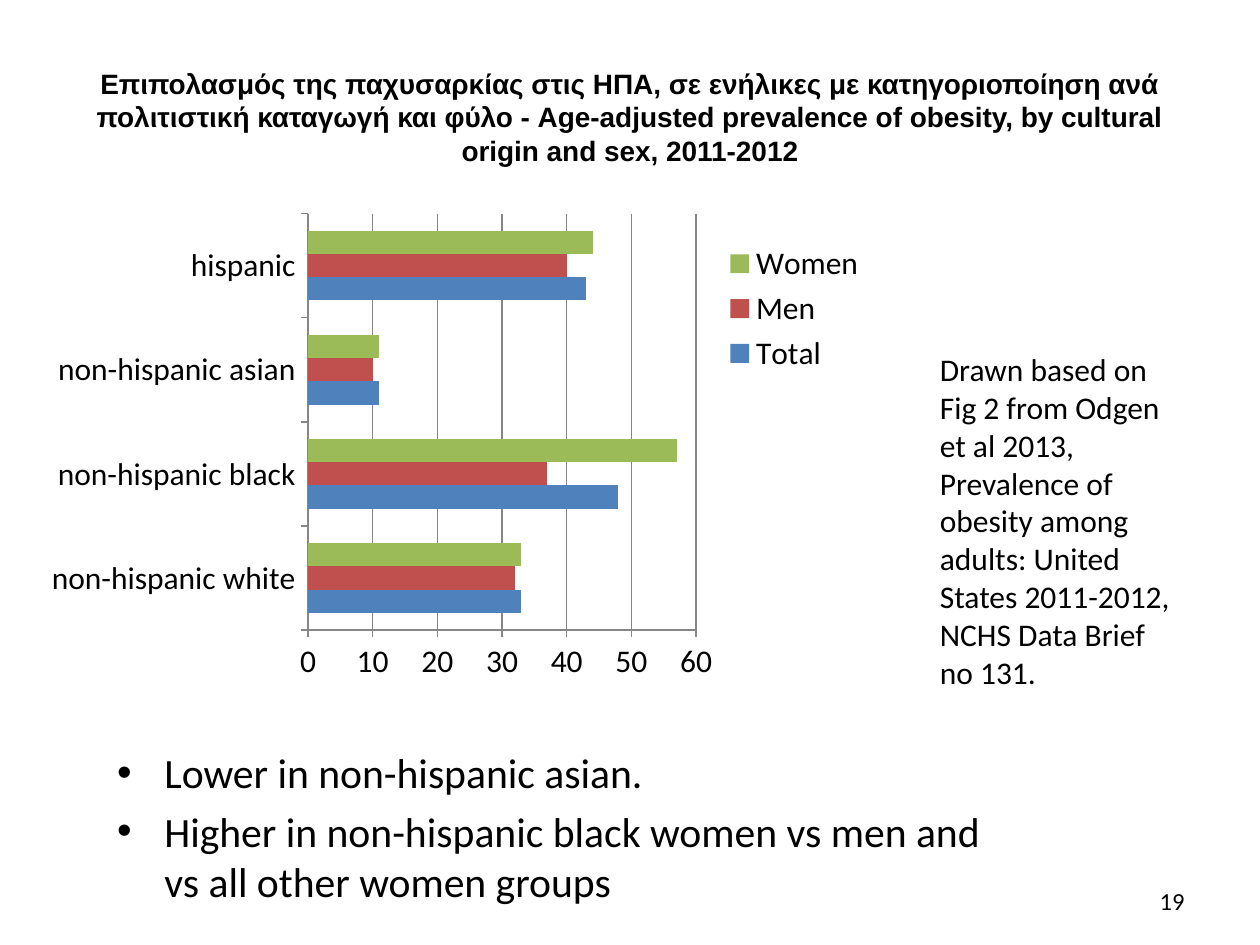
from lxml import etree
from pptx import Presentation
from pptx.chart.data import CategoryChartData
from pptx.dml.color import RGBColor
from pptx.enum import chart as ch, text
from pptx.oxml import parse_xml
from pptx.oxml.ns import nsdecls, qn
from pptx.util import Pt

COLORS = {"ink": "000000", "grid": "868686", "paper": "FFFFFF",
          "Total": "4F81BD", "Men": "C0504D", "Women": "9BBB59"}
ORIGINS = ["non-hispanic white", "non-hispanic black",
           "non-hispanic asian", "hispanic"]
PREVALENCE = {"Total": (33, 48, 11, 43),
              "Men": (32, 37, 10, 40),
              "Women": (33, 57, 11, 44)}


def rgb(name):
    return RGBColor.from_string(COLORS[name])


def style(font, size, face="Calibri", bold=False):
    font.size, font.name, font.bold = Pt(size), face, bold
    font.color.rgb = rgb("ink")


def add_text(slide, box, lines, size, face="Calibri", bold=False,
             align=text.PP_ALIGN.LEFT, anchor=text.MSO_ANCHOR.TOP):
    frame = slide.shapes.add_textbox(*map(Pt, box)).text_frame
    frame.word_wrap = True
    frame.vertical_anchor = anchor
    frame.text = "\n".join(lines)
    for paragraph in frame.paragraphs:
        paragraph.alignment = align
        for run in paragraph.runs:
            style(run.font, size, face, bold)
    return frame


def add_takeaways(slide, box, lines):
    """Bulleted text with a hanging indent."""
    for paragraph in add_text(slide, box, lines, 23.8).paragraphs:
        paragraph.space_before = Pt(4.8)
        properties = paragraph._p.get_or_add_pPr()
        properties.set("marL", str(Pt(27)))
        properties.set("indent", str(-Pt(27)))
        etree.SubElement(properties, qn("a:buFont")).set("typeface", "Arial")
        etree.SubElement(properties, qn("a:buChar")).set("char", "•")


def layout_xml(x, y, w, h, inner=False):
    """Manual chart layout, in fractions of the chart's box."""
    target = '<c:layoutTarget val="inner"/>' if inner else ""
    return parse_xml(
        f'<c:layout {nsdecls("c")}><c:manualLayout>{target}'
        '<c:xMode val="edge"/><c:yMode val="edge"/>'
        f'<c:x val="{x}"/><c:y val="{y}"/><c:w val="{w}"/><c:h val="{h}"/>'
        '</c:manualLayout></c:layout>')


def add_prevalence_chart(slide, box):
    data = CategoryChartData()
    data.categories = ORIGINS
    for group, values in PREVALENCE.items():
        data.add_series(group, values)
    chart = slide.shapes.add_chart(
        ch.XL_CHART_TYPE.BAR_CLUSTERED, *map(Pt, box), data).chart
    style(chart.font, 18)
    chart.has_title = False

    plot = chart.plots[0]
    plot.gap_width, plot.overlap, plot.vary_by_categories = 150, 0, False
    for series in plot.series:
        series.format.fill.solid()
        series.format.fill.fore_color.rgb = rgb(series.name)

    scale = chart.value_axis
    scale.minimum_scale, scale.maximum_scale, scale.major_unit = 0, 60, 10
    scale.has_major_gridlines = True
    for axis in (chart.category_axis, scale):
        axis.major_tick_mark = ch.XL_TICK_MARK.OUTSIDE
        axis.format.line.color.rgb = rgb("grid")
    scale.major_gridlines.format.line.color.rgb = rgb("grid")

    chart.has_legend = True
    legend = chart.legend
    legend.position = ch.XL_LEGEND_POSITION.RIGHT
    legend.include_in_layout = False
    for old in legend._element.findall(qn("c:layout")):
        legend._element.remove(old)
    legend._element.find(qn("c:legendPos")).addnext(
        layout_xml(0.8, 0.07, 0.18, 0.29))
    area = chart._chartSpace.chart.plotArea
    for old in area.findall(qn("c:layout")):
        area.remove(old)
    area.insert(0, layout_xml(0.32, 0.02, 0.455, 0.856, inner=True))


def build_slide(prs):
    slide = prs.slides.add_slide(prs.slide_layouts[6])
    slide.background.fill.solid()
    slide.background.fill.fore_color.rgb = rgb("paper")
    middle = text.MSO_ANCHOR.MIDDLE
    add_text(slide, (36, 21.6, 648, 90),
             ["Επιπολασμός της παχυσαρκίας στις ΗΠΑ, σε ενήλικες με "
              "κατηγοριοποίηση ανά πολιτιστική καταγωγή και φύλο - "
              "Age-adjusted prevalence of obesity, by cultural origin "
              "and sex, 2011-2012"],
             16, "Arial", True, text.PP_ALIGN.CENTER, middle)
    add_prevalence_chart(slide, (20, 116.6, 487.5, 278))
    add_takeaways(slide, (59.8, 423.4, 510.5, 87.8),
                  ["Lower in non-hispanic asian.",
                   "Higher in non-hispanic black women vs men and "
                   "vs all other women groups"])
    add_text(slide, (516, 500.5, 168, 28.8), ["19"], 14,
             align=text.PP_ALIGN.RIGHT, anchor=middle)
    add_text(slide, (530, 196.6, 147.6, 198.7),
             ["Drawn based on Fig 2 from Odgen et al 2013, Prevalence of "
              "obesity among adults: United States 2011-2012, NCHS Data "
              "Brief no 131."], 18)


def main():
    prs = Presentation()
    prs.slide_width, prs.slide_height = Pt(720), Pt(540)
    build_slide(prs)
    prs.save("out.pptx")


if __name__ == "__main__":
    main()
